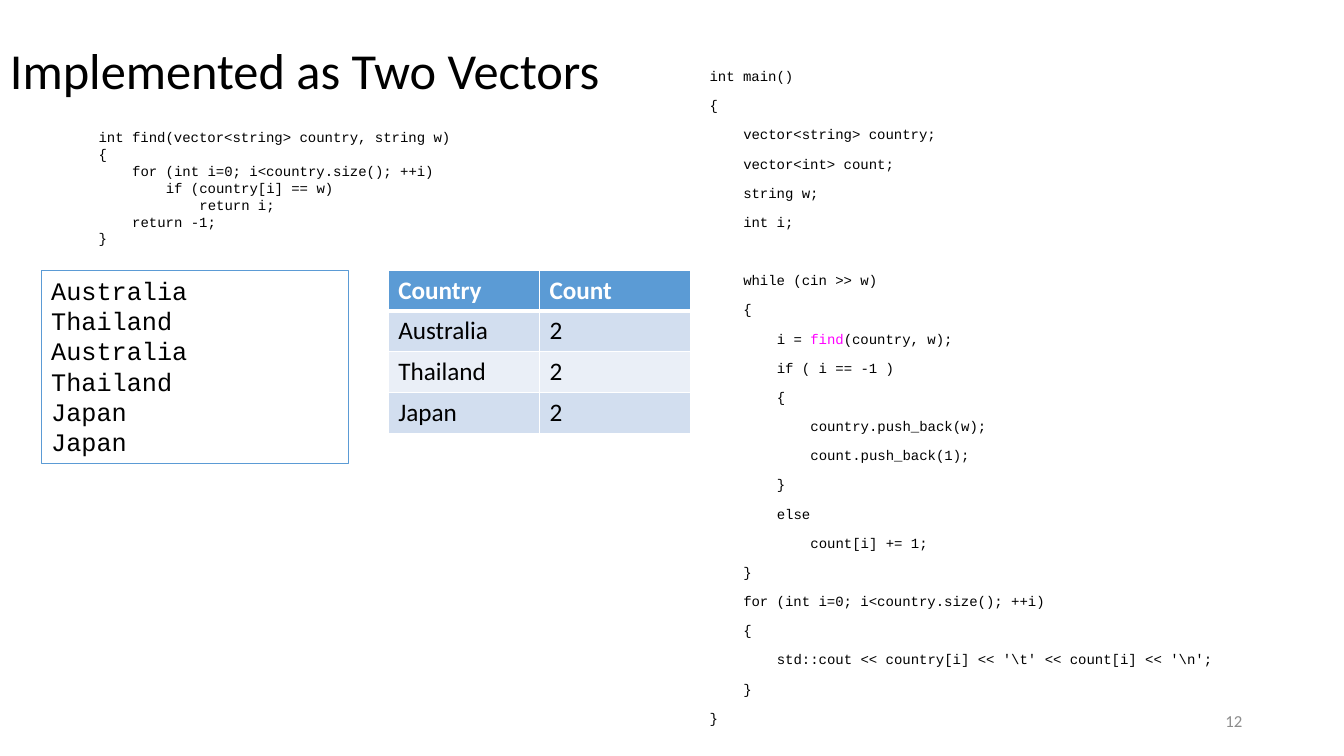
from dataclasses import dataclass

from lxml import etree
from pptx import Presentation
from pptx.dml.color import RGBColor
from pptx.enum.shapes import MSO_SHAPE
from pptx.enum.text import MSO_ANCHOR, PP_ALIGN
from pptx.oxml.ns import qn
from pptx.util import Inches, Pt

RECTANGLE = MSO_SHAPE.RECTANGLE
TOP, MIDDLE = MSO_ANCHOR.TOP, MSO_ANCHOR.MIDDLE
LEFT, RIGHT = PP_ALIGN.LEFT, PP_ALIGN.RIGHT


@dataclass(frozen=True)
class Theme:
    sans: str = "Calibri"
    mono: str = "Courier New"
    black: str = "000000"
    white: str = "FFFFFF"
    gray: str = "8C8C8C"
    blue: str = "5B9BD5"
    magenta: str = "FF00FF"
    bands: tuple = ("D2DEEF", "EAEFF7")
    title_size: int = 36
    body_size: int = 18
    number_size: int = 12
    code_size: int = 10
    code_indent: float = 6
    code_gap: float = 10
    code_line: float = 20.8


theme = Theme()

FIND_CODE = """\
int find(vector<string> country, string w)
{
    for (int i=0; i<country.size(); ++i)
        if (country[i] == w)
            return i;
    return -1;
}"""

MAIN_CODE = r"""int main()
{
    vector<string> country;
    vector<int> count;
    string w;
    int i;

    while (cin >> w)
    {
        i = find(country, w);
        if ( i == -1 )
        {
            country.push_back(w);
            count.push_back(1);
        }
        else
            count[i] += 1;
    }
    for (int i=0; i<country.size(); ++i)
    {
        std::cout << country[i] << '\t' << count[i] << '\n';
    }
}"""

INPUT_WORDS = "Australia\nThailand\nAustralia\nThailand\nJapan\nJapan"
COUNTS = [("Country", "Count"), ("Australia", "2"), ("Thailand", "2"), ("Japan", "2")]


def style(paragraph, size, font=theme.sans, color=theme.black, align=LEFT):
    paragraph.alignment = align
    paragraph.font.size = Pt(size)
    paragraph.font.name = font
    paragraph.font.color.rgb = RGBColor.from_string(color)


def write_lines(shape, text, size, line_spacing=1.0, gap=0):
    frame = shape.text_frame
    frame.word_wrap = True
    frame.vertical_anchor = TOP
    paragraph = frame.paragraphs[0]
    blank_lines = 0
    for line in text.split("\n"):
        words = line.lstrip()
        if not words:
            blank_lines += 1
            continue
        if paragraph.runs:
            paragraph = frame.add_paragraph()
        style(paragraph, size, theme.mono)
        paragraph.line_spacing = line_spacing
        paragraph.space_before = Pt(gap + blank_lines * theme.code_line)
        blank_lines = 0
        margin = Pt((len(line) - len(words)) * theme.code_indent)
        properties = paragraph._p.get_or_add_pPr()
        properties.set("marL", str(margin))
        properties.set("indent", "0")
        before, call, after = words.partition("find") if "= find" in words else (words, "", "")
        for part in filter(None, (before, call, after)):
            run = paragraph.add_run()
            run.text = part
            if part == call:
                run.font.color.rgb = RGBColor.from_string(theme.magenta)


presentation = Presentation()
presentation.slide_width = Inches(13.33)
presentation.slide_height = Inches(7.5)
slide = presentation.slides.add_slide(presentation.slide_layouts[6])
shapes = slide.shapes

labels = [
    ("Implemented as Two Vectors", (0, 0, 6.37, 1.45), theme.title_size, theme.black, LEFT, 0.9),
    ("12", (9.42, 6.95, 3, 0.4), theme.number_size, theme.gray, RIGHT, 1.0),
]
for text, box, size, color, align, line_spacing in labels:
    label = shapes.add_textbox(*map(Inches, box))
    frame = label.text_frame
    frame.word_wrap = True
    frame.vertical_anchor = MIDDLE
    paragraph = frame.paragraphs[0]
    paragraph.text = text
    paragraph.line_spacing = line_spacing
    style(paragraph, size, color=color, align=align)

main_listing = shapes.add_textbox(Inches(6.94), Inches(0.64), Inches(5.47), Inches(6.12))
write_lines(main_listing, MAIN_CODE, theme.code_size, 0.9, theme.code_gap)

find_listing = shapes.add_textbox(Inches(0.88), Inches(1.23), Inches(4.47), Inches(1.28))
write_lines(find_listing, FIND_CODE, theme.code_size)

input_box = shapes.add_shape(RECTANGLE, Inches(0.41), Inches(2.68), Inches(3.05), Inches(1.92))
input_box.shadow.inherit = False
input_box.fill.background()
input_box.line.color.rgb = RGBColor.from_string(theme.blue)
input_box.line.width = Pt(0.75)
write_lines(input_box, INPUT_WORDS, theme.body_size)

table = shapes.add_table(
    len(COUNTS), 2, Inches(3.85), Inches(2.68), Inches(3), Inches(1.62)
).table
table.horz_banding = False
for row, values in enumerate(COUNTS):
    header = row == 0
    for column, value in enumerate(values):
        cell = table.cell(row, column)
        properties = cell._tc.get_or_add_tcPr()
        for side in ("lnL", "lnR", "lnT", "lnB"):
            heavy = (header and side == "lnB") or (row == 1 and side == "lnT")
            border = etree.SubElement(properties, qn(f"a:{side}"), w=str(Pt(3 if heavy else 1)))
            solid = etree.SubElement(border, qn("a:solidFill"))
            etree.SubElement(solid, qn("a:srgbClr"), val=theme.white)
        cell.fill.solid()
        fill = theme.blue if header else theme.bands[(row - 1) % 2]
        cell.fill.fore_color.rgb = RGBColor.from_string(fill)
        paragraph = cell.text_frame.paragraphs[0]
        paragraph.text = value
        style(paragraph, theme.body_size, color=theme.white if header else theme.black)
        paragraph.font.bold = header

presentation.save("out.pptx")
